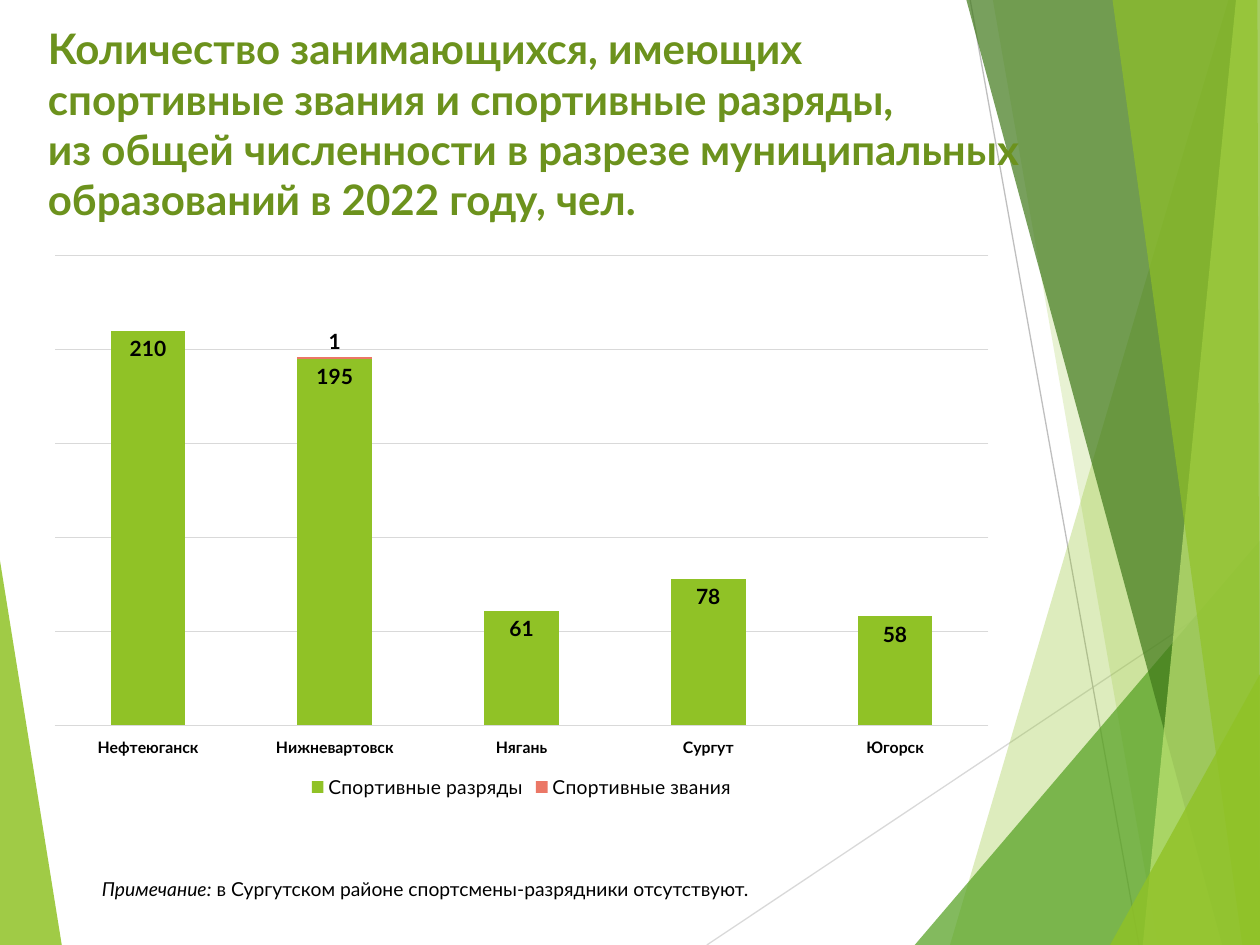
from lxml.etree import SubElement
from pptx import Presentation
from pptx.chart.data import CategoryChartData
from pptx.dml.color import RGBColor
from pptx.enum.chart import XL_CHART_TYPE, XL_LABEL_POSITION, XL_LEGEND_POSITION, XL_TICK_LABEL_POSITION, XL_TICK_MARK
from pptx.enum.shapes import MSO_CONNECTOR
from pptx.enum.text import MSO_ANCHOR, MSO_AUTO_SIZE, PP_ALIGN
from pptx.oxml import parse_xml
from pptx.oxml.ns import nsdecls, qn
from pptx.util import Inches, Pt

FONT = "Lato"
BLACK = RGBColor(0x00, 0x00, 0x00)
TITLE_GREEN = RGBColor(0x6C, 0x92, 0x1D)
GREEN = RGBColor(0x90, 0xC2, 0x26)
MID_GREEN = RGBColor(0x54, 0xA0, 0x21)
DARK_GREEN = RGBColor(0x3F, 0x78, 0x19)
PALE_GREEN = RGBColor(0xC0, 0xE4, 0x74)
CORAL = RGBColor(0xEB, 0x77, 0x66)
LIGHT_GREY = RGBColor(0xD9, 0xD9, 0xD9)
GREY = RGBColor(0xBF, 0xBF, 0xBF)

TITLE = ("Количество занимающихся, имеющих \vспортивные звания и спортивные разряды, \v"
         "из общей численности в разрезе муниципальных образований в 2022 году, чел.")
NOTE = [("Примечание:", True), (" в Сургутском районе спортсмены-разрядники отсутствуют.", False)]
CITIES = ["Нефтеюганск", "Нижневартовск", "Нягань", "Сургут", "Югорск"]
SERIES = [("Спортивные разряды", [210, 195, 61, 78, 58], GREEN),
          ("Спортивные звания", [None, 1, None, None, None], CORAL)]

# Corners, colour and opacity in percent, from back to front
LEFT_FACET = ([(0, 4.45), (0.49, 7.5), (0, 7.5)], GREEN, 85)
RIGHT_FACETS = [
    ([(9.75, 0), (7.54, 7.5), (10, 7.5), (10, 0)], GREEN, 30),
    ([(7.88, 0), (9.19, 7.5), (10, 7.5), (10, 0)], GREEN, 20),
    ([(7.26, 7.5), (10, 4.29), (10, 7.5)], MID_GREEN, 72),
    ([(7.67, 0), (9.7, 7.5), (10, 7.5), (10, 0)], DARK_GREEN, 70),
    ([(9.81, 0), (9.07, 7.5), (10, 7.5), (10, 0)], PALE_GREEN, 70),
    ([(8.83, 0), (9.86, 7.5), (10, 7.5), (9.98, 0)], GREEN, 65),
    ([(8.81, 7.5), (10, 5.35), (10, 7.5)], GREEN, 80),
]


class SlideBuilder:
    def __init__(self, page):
        self.page = page
        self.shapes = page.shapes

    def style(self, font, size, color=BLACK, **extra):
        values = {"name": FONT, "size": Pt(size), **extra}
        for name, value in values.items():
            setattr(font, name, value)
        font.color.rgb = color

    def rule(self, line, color):
        line.color.rgb = color
        line.width = Pt(0.75)

    def place(self, box, left, top, width, height):
        values = {"left": left, "top": top, "width": width, "height": height}
        for name, value in values.items():
            setattr(box, name, Inches(value))

    def facet(self, corners, color, opacity):
        points = [(Inches(x), Inches(y)) for x, y in corners]
        builder = self.shapes.build_freeform(*points[0])
        builder.add_line_segments(points[1:], close=True)
        shape = builder.convert_to_shape()
        shape.shadow.inherit = False
        shape.line.fill.background()
        shape.fill.solid()
        shape.fill.fore_color.rgb = color
        tint = shape._element.spPr.find(qn("a:solidFill"))[0]
        SubElement(tint, qn("a:alpha"), val=str(opacity * 1000))

    def line(self, start, end, color):
        ends = [Inches(value) for value in (*start, *end)]
        connector = self.shapes.add_connector(MSO_CONNECTOR.STRAIGHT, *ends)
        self.rule(connector.line, color)
        SubElement(connector._element.spPr, qn("a:effectLst"))

    def title(self, text, *bounds):
        box = self.shapes.title
        self.shapes._spTree.append(box._element)  # bring in front of the facets
        self.place(box, *bounds)
        frame = box.text_frame
        values = {"word_wrap": True, "auto_size": MSO_AUTO_SIZE.NONE, "vertical_anchor": MSO_ANCHOR.TOP}
        for name, value in values.items():
            setattr(frame, name, value)
        frame.text = text
        para = frame.paragraphs[0]
        para.alignment = PP_ALIGN.LEFT
        for span in para.runs:
            self.style(span.font, 24, TITLE_GREEN, bold=True)

    def note(self, parts, *bounds):
        box = self.shapes.add_textbox(*map(Inches, bounds))
        box.text_frame.word_wrap = True
        para = box.text_frame.paragraphs[0]
        for text, italic in parts:
            span = para.add_run()
            span.text = text
            self.style(span.font, 11, italic=italic)

    def stacked_columns(self, categories, rows, *bounds):
        data = CategoryChartData()
        data.categories = categories
        for name, values, _ in rows:
            data.add_series(name, values)
        chart = self.shapes.add_chart(XL_CHART_TYPE.COLUMN_STACKED, *map(Inches, bounds), data).chart
        chart.has_title = False
        self.style(chart.font, 10)

        # Axes and legend
        values = chart.value_axis
        values.minimum_scale, values.maximum_scale, values.major_unit = 0, 250, 50
        values.visible = False
        self.rule(values.major_gridlines.format.line, LIGHT_GREY)
        cities = chart.category_axis
        cities.major_tick_mark = XL_TICK_MARK.NONE
        cities.tick_label_position = XL_TICK_LABEL_POSITION.LOW
        self.rule(cities.format.line, LIGHT_GREY)
        self.style(cities.tick_labels.font, 9, bold=True)
        chart.has_legend = True
        chart.legend.position = XL_LEGEND_POSITION.BOTTOM
        chart.legend.include_in_layout = False
        self.style(chart.legend.font, 11)

        # Columns and their labels
        plot = chart.plots[0]
        plot.gap_width, plot.overlap = 150, 100
        plot.vary_by_categories = False
        for series, (_, _, color) in zip(plot.series, rows):
            series.format.fill.solid()
            series.format.fill.fore_color.rgb = color
            series.data_labels.show_value = True
            self.style(series.data_labels.font, 12, bold=True)
        ranks, honours = plot.series
        ranks.data_labels.position = XL_LABEL_POSITION.INSIDE_END

        # The thin segment carries its label above the column
        self.style(honours.points[1].data_label.font, 12, bold=True)
        label = honours._element.find(".//" + qn("c:dLbl"))
        label.insert(1, self.layout(x=0, y=-0.03))
        area = chart._chartSpace.find(".//" + qn("c:plotArea"))
        for old in area.findall(qn("c:layout")):
            area.remove(old)
        area.insert(0, self.layout("inner", x=0.02, y=0.02, w=0.96, h=0.84))

    def layout(self, target=None, **sizes):
        layout = parse_xml(f"<c:layout {nsdecls('c')}><c:manualLayout/></c:layout>")
        manual = layout[0]
        if target:
            SubElement(manual, qn("c:layoutTarget"), val=target)
            for mode in ("xMode", "yMode"):
                SubElement(manual, qn(f"c:{mode}"), val="edge")
        for name, value in sizes.items():
            SubElement(manual, qn(f"c:{name}"), val=str(value))
        return layout


def main():
    deck = Presentation()
    deck.slide_width, deck.slide_height = Inches(10), Inches(7.5)
    slide = SlideBuilder(deck.slides.add_slide(deck.slide_layouts[5]))

    # Background decoration
    slide.facet(*LEFT_FACET)
    slide.line((5.61, 7.5), (10, 4.57), LIGHT_GREY)
    slide.line((7.7, 0), (9.04, 7.5), GREY)
    for facet in RIGHT_FACETS:
        slide.facet(*facet)

    # Content
    slide.title(TITLE, 0.28, 0.13, 7.95, 1.25)
    slide.stacked_columns(CITIES, SERIES, 0.28, 1.94, 7.72, 4.44)
    slide.note(NOTE, 0.71, 6.91, 7.09, 0.29)

    deck.save("out.pptx")


if __name__ == "__main__":
    main()
